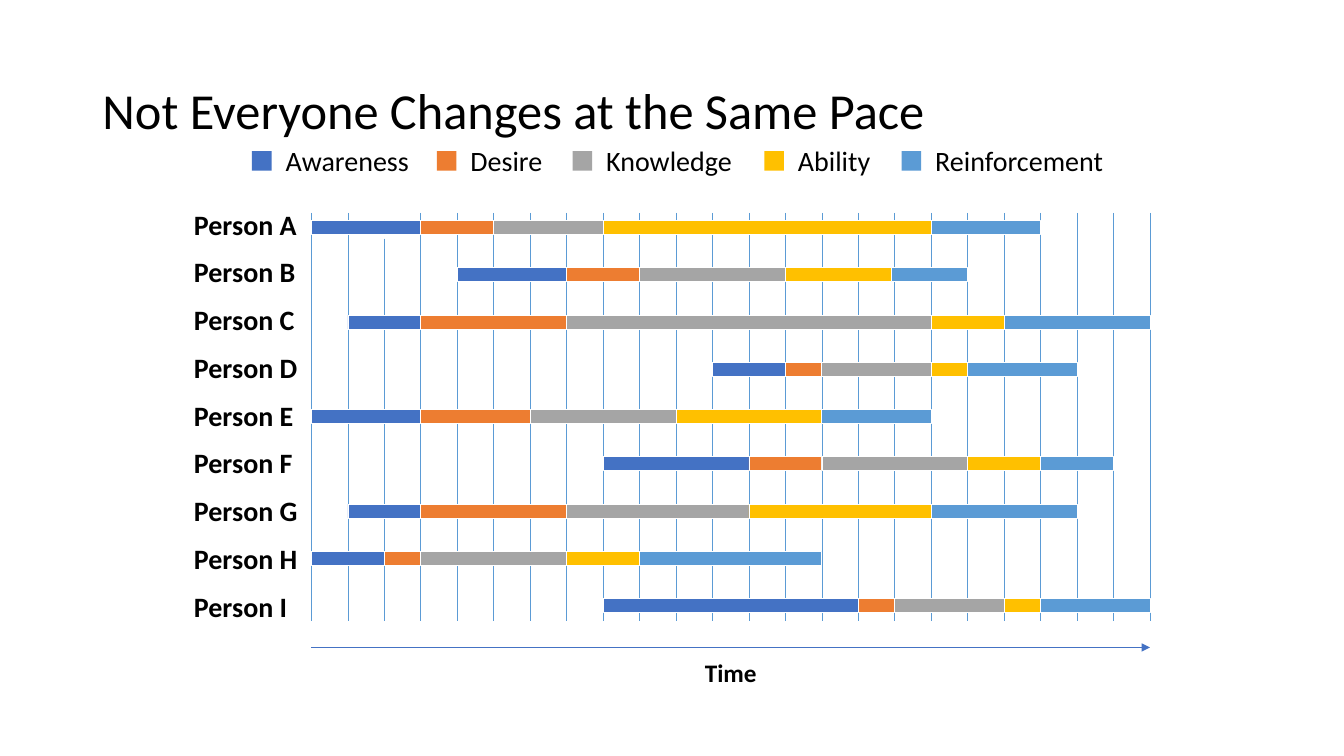
import itertools

import pptx
import pptx.util
from pptx.dml.color import RGBColor
from pptx.enum.shapes import MSO_CONNECTOR, MSO_SHAPE
from pptx.enum.text import MSO_ANCHOR, PP_ALIGN
from pptx.oxml.ns import qn
from lxml import etree

Pt = pptx.util.Pt

COLORS = {
    "Awareness": "4472C4",
    "Desire": "ED7D31",
    "Knowledge": "A5A5A5",
    "Ability": "FFC000",
    "Reinforcement": "5B9BD5",
    "grid": "5B9BD5",
    "time": "4472C4",
    "text": "000000",
    "edge": "FFFFFF",
}

# Stage: swatch left, label width
LEGEND = {
    "Awareness": (180, 91),
    "Desire": (312, 56),
    "Knowledge": (409, 93),
    "Ability": (546, 56),
    "Reinforcement": (644, 122),
}

# Person: starting grid step, then the steps spent in each stage
PACES = {
    "Person A": (0, [3, 2, 3, 9, 3]),
    "Person B": (4, [3, 2, 4, 2.9, 2.1]),
    "Person C": (1, [2, 4, 10, 2, 4]),
    "Person D": (11, [2, 1, 3, 1, 3]),
    "Person E": (0, [3, 3, 4, 4, 3]),
    "Person F": (8, [4, 2, 4, 2, 2]),
    "Person G": (1, [2, 4, 5, 5, 4]),
    "Person H": (0, [2, 1, 4, 2, 5]),
    "Person I": (8, [7, 1, 3, 1, 3]),
}

GRID_LEFT, GRID_TOP, GRID_BOTTOM = 222.5, 152, 443.5
STEP, STEPS = 26.04, 23
SHORT_LINE, SHORT_TOP = 2, 170.5
BAR_TOP, BAR_PITCH, BAR_HEIGHT = 157.5, 33.75, 10
LABEL_TOP, LABEL_PITCH = 149, 34.1
TIME_TOP = 462.5

TITLE_FONT = {"size": Pt(36), "name": "Calibri", "bold": False}
PERSON_FONT = {"size": Pt(20), "name": "Calibri", "bold": True}
LEGEND_FONT = {"size": Pt(20), "name": "Calibri", "bold": False}
TIME_FONT = {"size": Pt(18), "name": "Calibri", "bold": True}
LABEL_FRAME = {
    "word_wrap": True,
    "vertical_anchor": MSO_ANCHOR.MIDDLE,
    "margin_left": 0,
    "margin_right": 0,
    "margin_top": Pt(2),
    "margin_bottom": Pt(2),
}


def rgb(name):
    return RGBColor.from_string(COLORS[name])


def apply_format(target, values):
    for attribute, value in values.items():
        setattr(target, attribute, value)


def write(frame, text, font):
    frame.text = text
    run = frame.paragraphs[0].runs[0]
    apply_format(run.font, font)
    run.font.color.rgb = rgb("text")


def add_label(slide, text, left, top, width, height, font):
    label = slide.shapes.add_textbox(Pt(left), Pt(top), Pt(width), Pt(height))
    apply_format(label.text_frame, LABEL_FRAME)
    write(label.text_frame, text, font)


def add_block(slide, stage, left, top, width, height, edge=None):
    block = slide.shapes.add_shape(
        MSO_SHAPE.RECTANGLE, Pt(left), Pt(top), Pt(width), Pt(height))
    block.shadow.inherit = False
    block.fill.solid()
    block.fill.fore_color.rgb = rgb(stage)
    if edge:
        block.line.color.rgb = rgb(edge)
        block.line.width = Pt(0.5)
    else:
        block.line.fill.background()


def add_line(slide, x1, y1, x2, y2, color, arrow=False):
    line = slide.shapes.add_connector(
        MSO_CONNECTOR.STRAIGHT, Pt(x1), Pt(y1), Pt(x2), Pt(y2))
    line.line.color.rgb = rgb(color)
    line.line.width = Pt(0.5)
    if arrow:
        etree.SubElement(line.line._get_or_add_ln(), qn("a:tailEnd"), type="triangle")
    etree.SubElement(line._element.spPr, qn("a:effectLst"))


def add_title(slide, text):
    title = slide.shapes.title
    apply_format(title, {"left": Pt(66), "top": Pt(29),
                         "width": Pt(828), "height": Pt(104)})
    write(title.text_frame, text, TITLE_FONT)
    title.text_frame.vertical_anchor = MSO_ANCHOR.MIDDLE
    apply_format(title.text_frame.paragraphs[0],
                 {"alignment": PP_ALIGN.LEFT, "line_spacing": 0.9})


def add_pace(slide, row, start, durations):
    bounds = list(itertools.accumulate(durations, initial=start))
    for stage, begin, duration in zip(LEGEND, bounds, durations):
        add_block(slide, stage, GRID_LEFT + begin * STEP, BAR_TOP + row * BAR_PITCH,
                  duration * STEP, BAR_HEIGHT, "edge")


def main():
    deck = pptx.Presentation()
    apply_format(deck, {"slide_width": Pt(960), "slide_height": Pt(540)})
    slide = deck.slides.add_slide(deck.slide_layouts[5])
    add_title(slide, "Not Everyone Changes at the Same Pace")

    # Person labels
    for row, person in enumerate(PACES):
        add_label(slide, person, 138.5, LABEL_TOP + row * LABEL_PITCH, 78, 22, PERSON_FONT)

    # Time grid
    for step in range(STEPS + 1):
        x = GRID_LEFT + step * STEP
        top = SHORT_TOP if step == SHORT_LINE else GRID_TOP
        add_line(slide, x, top, x, GRID_BOTTOM, "grid")

    # Stage bars
    for row, (start, durations) in enumerate(PACES.values()):
        add_pace(slide, row, start, durations)

    # Legend
    for stage, (left, width) in LEGEND.items():
        add_block(slide, stage, left, 108, 14, 14)
        add_label(slide, stage, left + 24, 103, width, 23, LEGEND_FONT)

    # Time axis
    add_line(slide, GRID_LEFT, TIME_TOP, GRID_LEFT + STEPS * STEP, TIME_TOP, "time", arrow=True)
    add_label(slide, "Time", 503.5, 473, 42, 15, TIME_FONT)

    deck.save("out.pptx")


if __name__ == "__main__":
    main()
